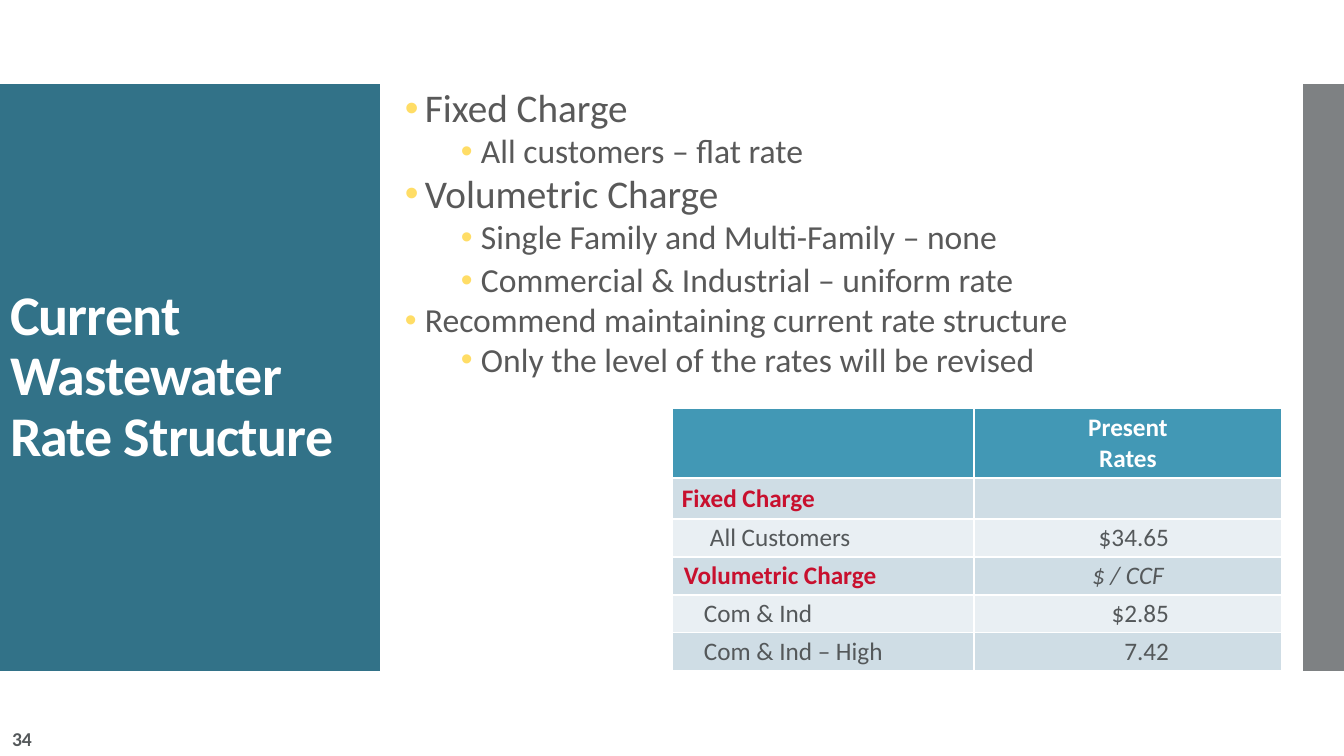
from lxml.etree import SubElement
from pptx import Presentation
from pptx.dml.color import RGBColor
from pptx.enum.shapes import MSO_SHAPE as Shape
from pptx.enum.text import MSO_ANCHOR as Anchor, PP_ALIGN as Align
from pptx.oxml.ns import qn
from pptx.util import Pt

SCALE = 9144000 / 1008  # EMU in one px
FONT = "Calibri"
WHITE, TEAL, GREY, RED = "FFFFFF", "327288", "54585A", "C8102E"
BODY, BULLET, HEADER, BANDS = "595959", "FFDD66", "4298B5", ("CFDDE5", "E9EFF3")

TITLE = "Current Wastewater Rate Structure"
PAGE_NUMBER = "34"
BULLETS = [  # level, size, text
    (0, 28, "Fixed Charge"),
    (1, 24, "All customers – flat rate"),
    (0, 28, "Volumetric Charge"),
    (1, 24, "Single Family and Multi-Family – none"),
    (1, 24, "Commercial & Industrial – uniform rate"),
    (0, 24, "Recommend maintaining current rate structure"),
    (1, 24, "Only the level of the rates will be revised"),
]
INDENTS, HANGING = (20, 76), 20

HEADINGS = ("", "Present\nRates")
RATES = [  # label, label indent, value
    ("Fixed Charge", 10, ""),
    ("All Customers", 38, "$34.65"),
    ("Volumetric Charge", 12, "$ / CCF"),
    ("Com & Ind", 32, "$2.85"),
    ("Com & Ind – High", 32, "7.42"),
]
SECTIONS = ("Fixed Charge", "Volumetric Charge")
COLUMNS, ROWS = (302, 308), (70, 41, 38, 38, 38, 38)
VALUE_INSET = 113

TOP, HEIGHT = 84, 587
PANEL_WIDTH, BAR_LEFT, BAR_WIDTH = 380, 1303, 41


def px(length):
    return round(length * SCALE)


def rgb(color):
    return RGBColor.from_string(color)


def write(para, text, size=18, color=GREY, bold=False, italic=False,
          align=Align.LEFT, line=None, tracking=None):
    para.text = text
    para.alignment = align
    para.line_spacing = line
    for span in para.runs:
        font = span.font
        font.name, font.size, font.bold, font.italic = FONT, Pt(size), bold, italic
        font.color.rgb = rgb(color)
        if tracking:
            span._r.get_or_add_rPr().set("spc", str(tracking))


def set_insets(target, left, top, right, bottom):
    target.margin_left, target.margin_top = px(left), px(top)
    target.margin_right, target.margin_bottom = px(right), px(bottom)


def add_block(page, left, width, color, alpha=None):
    block = page.shapes.add_shape(Shape.RECTANGLE, px(left), px(TOP), px(width), px(HEIGHT))
    block.shadow.inherit = False
    block.line.fill.background()
    block.fill.solid()
    block.fill.fore_color.rgb = rgb(color)
    if alpha:
        fill = block._element.spPr.find(qn("a:solidFill"))
        SubElement(fill[0], qn("a:alpha"), val=str(alpha * 1000))


def add_text_box(page, left, top, width, height, insets, wrap=True):
    box = page.shapes.add_textbox(px(left), px(top), px(width), px(height))
    frame = box.text_frame
    frame.word_wrap = wrap
    set_insets(frame, *insets)
    return frame


def add_bullet(para, level):
    props = para._p.get_or_add_pPr()
    props.set("marL", str(px(INDENTS[level])))
    props.set("indent", str(-px(HANGING)))
    color = SubElement(props, qn("a:buClr"))
    SubElement(color, qn("a:srgbClr"), val=BULLET)
    SubElement(props, qn("a:buFont"), typeface="Arial")
    SubElement(props, qn("a:buChar"), char="•")


def style_cell(cell, fill, sides):
    """Draw white borders on the given sides, then the fill."""
    cell.vertical_anchor = Anchor.MIDDLE
    props = cell._tc.get_or_add_tcPr()
    for side in sides:
        border = SubElement(props, qn(f"a:ln{side}"), w=str(Pt(1)))
        paint = SubElement(border, qn("a:solidFill"))
        SubElement(paint, qn("a:srgbClr"), val=WHITE)
    cell.fill.solid()
    cell.fill.fore_color.rgb = rgb(fill)


def add_rate_table(page):
    table = page.shapes.add_table(len(ROWS), len(COLUMNS), px(672), px(408),
                                  px(sum(COLUMNS)), px(sum(ROWS))).table
    table.horz_banding = False
    for column, width in zip(table.columns, COLUMNS):
        column.width = px(width)
    for row, height in zip(table.rows, ROWS):
        row.height = px(height)

    for index, heading in enumerate(HEADINGS):
        cell = table.cell(0, index)
        set_insets(cell, 0, 0, 0, 0)
        style_cell(cell, HEADER, "LRB")
        write(cell.text_frame.paragraphs[0], heading, color=WHITE, bold=True,
              align=Align.CENTER)

    for index, (label, indent, value) in enumerate(RATES):
        section = label in SECTIONS
        name_cell, value_cell = table.rows[index + 1].cells
        set_insets(name_cell, indent, 0, 0, 0)
        set_insets(value_cell, 0, 0, 0 if section else VALUE_INSET, 0)
        for cell in (name_cell, value_cell):
            style_cell(cell, BANDS[index % 2], "LRB" if index else "LRT")
        write(name_cell.text_frame.paragraphs[0], label,
              color=RED if section else GREY, bold=section)
        write(value_cell.text_frame.paragraphs[0], value, italic=section,
              align=Align.CENTER if section else Align.RIGHT)


def main():
    deck = Presentation()
    deck.slide_width, deck.slide_height = px(1344), px(756)
    page = deck.slides.add_slide(deck.slide_layouts[6])

    add_block(page, 0, PANEL_WIDTH, TEAL)
    add_block(page, BAR_LEFT, BAR_WIDTH, GREY, alpha=75)

    body = add_text_box(page, PANEL_WIDTH, TOP, BAR_LEFT - PANEL_WIDTH, HEIGHT, (25, 5, 25, 5))
    for index, (level, size, text) in enumerate(BULLETS):
        para = body.add_paragraph() if index else body.paragraphs[0]
        write(para, text, size=size, color=BODY, line=0.9)
        para.level = level
        para.space_before = para.space_after = Pt(2.5 * level)
        add_bullet(para, level)

    title = add_text_box(page, 0, TOP, PANEL_WIDTH, HEIGHT, (10, 5, 10, 5))
    title.vertical_anchor = Anchor.MIDDLE
    write(title.paragraphs[0], TITLE, size=40, color=WHITE, bold=True, line=0.9, tracking=-60)

    number = add_text_box(page, 0, 722, 42, 34, (10, 5, 10, 5), wrap=False)
    write(number.paragraphs[0], PAGE_NUMBER, size=14, bold=True, align=Align.RIGHT)

    add_rate_table(page)
    deck.save("out.pptx")


if __name__ == "__main__":
    main()
